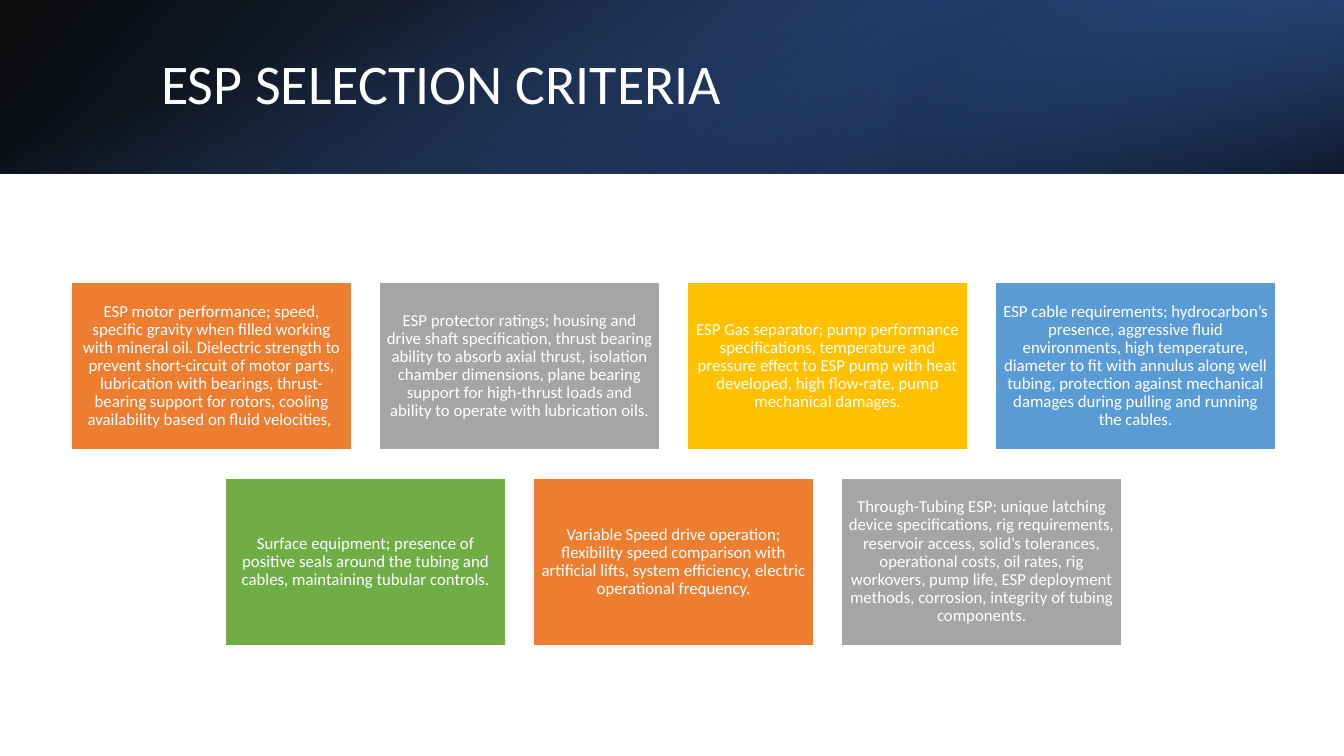
from pptx import Presentation
from pptx.dml.color import RGBColor
from pptx.enum import shapes, text
from pptx.oxml import xmlchemy as x
from pptx.util import Pt

THEME = {
    "font": "Calibri", "title_size": 40, "card_size": 12, "white": "FFFFFF",
    "black": "000000", "blue": "4472C4", "mid_blue": "2F5597", "navy": "203864",
    "orange": "ED7D31", "gray": "A5A5A5", "gold": "FFC000",
    "sky": "5B9BD5", "green": "70AD47",
}


def color(name):
    return RGBColor.from_string(THEME[name])


def set_text(s, words, size, align):
    tf = s.text_frame
    tf.word_wrap = True
    tf.vertical_anchor = text.MSO_ANCHOR.MIDDLE
    tf.text = words
    p = tf.paragraphs[0]
    p.alignment = align
    p.line_spacing = 0.9
    r = p.runs[0]
    r.font.name = THEME["font"]
    r.font.size = Pt(THEME[size])
    r.font.color.rgb = color("white")
    return tf


prs = Presentation()
prs.slide_width, prs.slide_height = Pt(960), Pt(540)
slide = prs.slides.add_slide(prs.slide_layouts[6])

BAND_H = 124
bands = [
    ((0, 0, 960, BAND_H), 0, True, 140, [(0, "black", 96), (1, "mid_blue", 100)]),
    ((640, 0, 320, BAND_H), 180, True, 320, [(0.19, "navy", 68), (1, "blue", 79)]),
    ((480 - BAND_H / 2, BAND_H / 2 - 480, BAND_H, 960), 90, False, 340,
     [(0.23, "blue", 0), (0.99, "black", 74)]),
]
for box, rotation, flipped, angle, stops in bands:
    s = slide.shapes.add_shape(shapes.MSO_SHAPE.RECTANGLE, *map(Pt, box))
    s.shadow.inherit = False
    s.line.fill.background()
    s.rotation = rotation
    if flipped:
        s._element.spPr.xfrm.set("flipH", "1")
    s.fill.gradient()
    s.fill.gradient_angle = 360 - angle
    for stop, (position, name, opacity) in zip(s.fill.gradient_stops, stops):
        stop.position = position
        stop.color.rgb = color(name)
        rgb = stop._gs[0]
        alpha = rgb.makeelement(x.qn("a:alpha"), {"val": str(opacity * 1000)})
        rgb.append(alpha)

title = slide.shapes.add_textbox(Pt(108), Pt(27.4), Pt(790.6), Pt(69))
set_text(title, "ESP SELECTION CRITERIA", "title_size", text.PP_ALIGN.LEFT)

CARD_W, CARD_H, GAP, CENTER, TOP = 200, 119.8, 20, 481.2, 201.6
rows = [
    [
        ("orange", "ESP motor performance; speed, specific gravity when filled working with mineral oil. "
         "Dielectric strength to prevent short-circuit of motor parts, lubrication with bearings, "
         "thrust-bearing support for rotors, cooling availability based on fluid velocities, "),
        ("gray", "ESP protector ratings; housing and drive shaft specification, thrust bearing ability "
         "to absorb axial thrust, isolation chamber dimensions, plane bearing support for "
         "high-thrust loads and ability to operate with lubrication oils."),
        ("gold", "ESP Gas separator; pump performance specifications, temperature and pressure effect "
         "to ESP pump with heat developed, high flow-rate, pump mechanical damages."),
        ("sky", "ESP cable requirements; hydrocarbon’s presence, aggressive fluid environments, high "
         "temperature, diameter to fit with annulus along well tubing, protection against "
         "mechanical damages during pulling and running the cables."),
    ],
    [
        ("green", "Surface equipment; presence of positive seals around the tubing and cables, "
         "maintaining tubular controls."),
        ("orange", "Variable Speed drive operation; flexibility speed comparison with artificial lifts, "
         "system efficiency, electric operational frequency."),
        ("gray", "Through-Tubing ESP; unique latching device specifications, rig requirements, reservoir "
         "access, solid’s tolerances, operational costs, oil rates, rig workovers, pump life, "
         "ESP deployment methods, corrosion, integrity of tubing components."),
    ],
]
for i, cards in enumerate(rows):
    left = CENTER - (len(cards) * (CARD_W + GAP) - GAP) / 2
    for j, (fill, words) in enumerate(cards):
        s = slide.shapes.add_shape(
            shapes.MSO_SHAPE.RECTANGLE, Pt(left + j * (CARD_W + GAP)),
            Pt(TOP + i * (CARD_H + GAP)), Pt(CARD_W), Pt(CARD_H))
        s.shadow.inherit = False
        s.fill.solid()
        s.fill.fore_color.rgb = color(fill)
        s.line.color.rgb = color("white")
        s.line.width = Pt(1)
        tf = set_text(s, words, "card_size", text.PP_ALIGN.CENTER)
        tf.margin_left = tf.margin_right = tf.margin_top = tf.margin_bottom = Pt(3.6)

prs.save("out.pptx")
